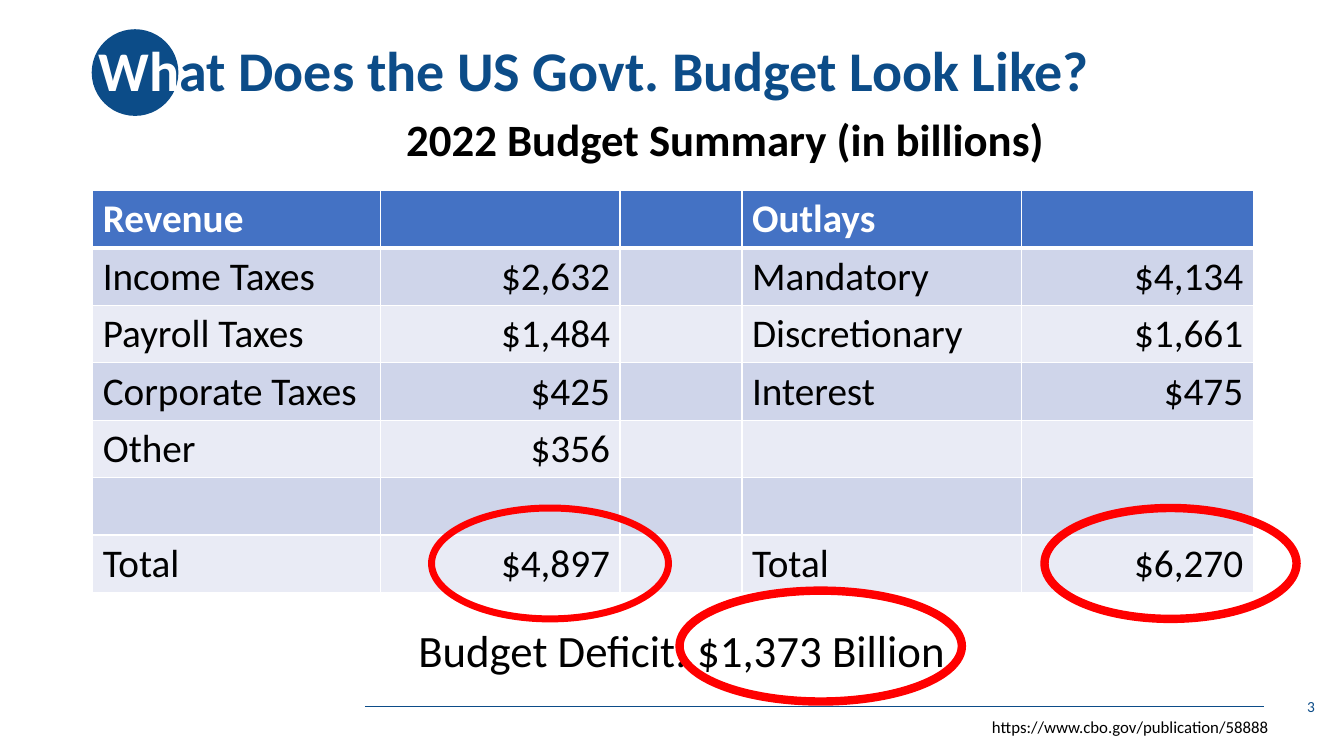
from pptx import Presentation
from pptx.dml.color import RGBColor as RGB
from pptx.enum.shapes import MSO_CONNECTOR as LINK, MSO_SHAPE as SHAPE
from pptx.enum.text import MSO_ANCHOR as ANCHOR, MSO_AUTO_SIZE as FIT, PP_ALIGN as ALIGN
from pptx.oxml import parse_xml
from pptx.oxml.ns import nsdecls
from pptx.util import Pt

PX = 9144  # 100 px to the inch
NAVY, WHITE, BLACK, RED = "0C4C88", "FFFFFF", "000000", "FF0000"
HEAD, BANDS = "4472C4", ("CFD5EA", "E9EBF5")

WIDTHS = (285, 238, 121, 277, 230)
ROWS = (
    ("Revenue", "", "", "Outlays", ""),
    ("Income Taxes", "$2,632", "", "Mandatory", "$4,134"),
    ("Payroll Taxes", "$1,484", "", "Discretionary", "$1,661"),
    ("Corporate Taxes", "$425", "", "Interest", "$475"),
    ("Other", "$356", "", "", ""),
    ("", "", "", "", ""),
    ("Total", "$4,897", "", "Total", "$6,270"),
)


def px(*nums):
    return [n * PX for n in nums]


def color(code):
    return RGB.from_string(code)


def add_run(para, text, size, code, bold=False):
    run = para.add_run()
    run.text = text
    font = run.font
    font.name, font.size, font.bold = "Calibri", Pt(size), bold
    font.color.rgb = color(code)


def add_text(slide, box, text, size, code=BLACK, bold=False,
             align=ALIGN.LEFT, wrap=False, anchor=ANCHOR.TOP):
    frame = slide.shapes.add_textbox(*px(*box)).text_frame
    frame.word_wrap = wrap
    frame.auto_size = FIT.NONE if wrap else FIT.SHAPE_TO_FIT_TEXT
    frame.vertical_anchor = anchor
    para = frame.paragraphs[0]
    para.alignment = align
    add_run(para, text, size, code, bold)


def add_oval(slide, box, fill=None, line=None, width=0):
    oval = slide.shapes.add_shape(SHAPE.OVAL, *px(*box))
    oval.shadow.inherit = False
    if fill:
        oval.fill.solid()
        oval.fill.fore_color.rgb = color(fill)
    else:
        oval.fill.background()
    if line:
        oval.line.color.rgb = color(line)
        oval.line.width = Pt(width)
    else:
        oval.line.fill.background()
    return oval


def add_title(slide, box):
    left, top, wide, high = box
    title = slide.shapes.title
    title.left, title.top, title.width, title.height = px(*box)
    # The disc lies behind the first letters
    disc = add_oval(slide, (left + 3, top + 29, 86, 86), fill=NAVY)
    title.element.addprevious(disc.element)
    frame = title.text_frame
    frame.word_wrap, frame.auto_size = True, FIT.NONE
    frame.vertical_anchor = ANCHOR.MIDDLE
    para = frame.paragraphs[0]
    para.alignment, para.line_spacing = ALIGN.LEFT, 0.9
    add_run(para, "Wh", 40, WHITE, True)
    add_run(para, "at Does the US Govt. Budget Look Like?", 40, NAVY, True)


def add_edges(cell, low):
    props = cell._tc.get_or_add_tcPr()
    for side, width in (("L", 1), ("R", 1), ("T", 1), ("B", low)):
        props.append(parse_xml(
            f'<a:ln{side} {nsdecls("a")} w="{Pt(width)}"><a:solidFill>'
            f'<a:srgbClr val="{WHITE}"/></a:solidFill></a:ln{side}>'))


def add_budget(slide, left, top, high):
    shape = slide.shapes.add_table(
        len(ROWS), len(WIDTHS), *px(left, top, sum(WIDTHS), high * len(ROWS)))
    table = shape.table
    for col, wide in zip(table.columns, WIDTHS):
        col.width = wide * PX
    for r, texts in enumerate(ROWS):
        table.rows[r].height = high * PX
        top_row = r == 0
        for c, text in enumerate(texts):
            cell = table.cell(r, c)
            add_edges(cell, 3 if r < 1 else 1)
            cell.fill.solid()
            cell.fill.fore_color.rgb = color(HEAD if top_row else BANDS[(r - 1) % 2])
            if text:
                para = cell.text_frame.paragraphs[0]
                para.alignment = ALIGN.RIGHT if c in (1, 4) else ALIGN.LEFT
                add_run(para, text, 28, WHITE if top_row else BLACK, top_row)


def add_marks(slide):
    for box, width in (((428, 504, 235, 110), 5),
                       ((1036, 504, 250, 110), 6),
                       ((674, 586, 280, 110), 6)):
        add_oval(slide, box, line=RED, width=width)


def add_foot(slide, left, top, wide):
    right = left + wide
    rule = slide.shapes.add_connector(LINK.STRAIGHT, *px(left, top, right, top))
    rule.line.color.rgb = color(NAVY)
    rule.line.width = Pt(0.5)
    rule.element.spPr.append(parse_xml(f'<a:effectLst {nsdecls("a")}/>'))
    add_text(slide, (right - 240, top - 20, 300, 40), "3", 11, NAVY,
             align=ALIGN.RIGHT, wrap=True, anchor=ANCHOR.MIDDLE)
    add_text(slide, (right - 280, top + 5, 298, 30),
             "https://www.cbo.gov/publication/58888", 12)


def main():
    deck = Presentation()
    deck.slide_width, deck.slide_height = px(1333, 750)
    slide = deck.slides.add_slide(deck.slide_layouts[5])
    add_title(slide, (88, 0, 1150, 145))
    add_foot(slide, 362, 701, 892)
    add_budget(slide, 92, 189, 57)
    add_text(slide, (393, 106, 659, 64), "2022 Budget Summary (in billions)", 32, bold=True)
    add_text(slide, (405, 613, 549, 64), "Budget Deficit: $1,373 Billion", 32)
    add_marks(slide)
    deck.save("out.pptx")


if __name__ == "__main__":
    main()
